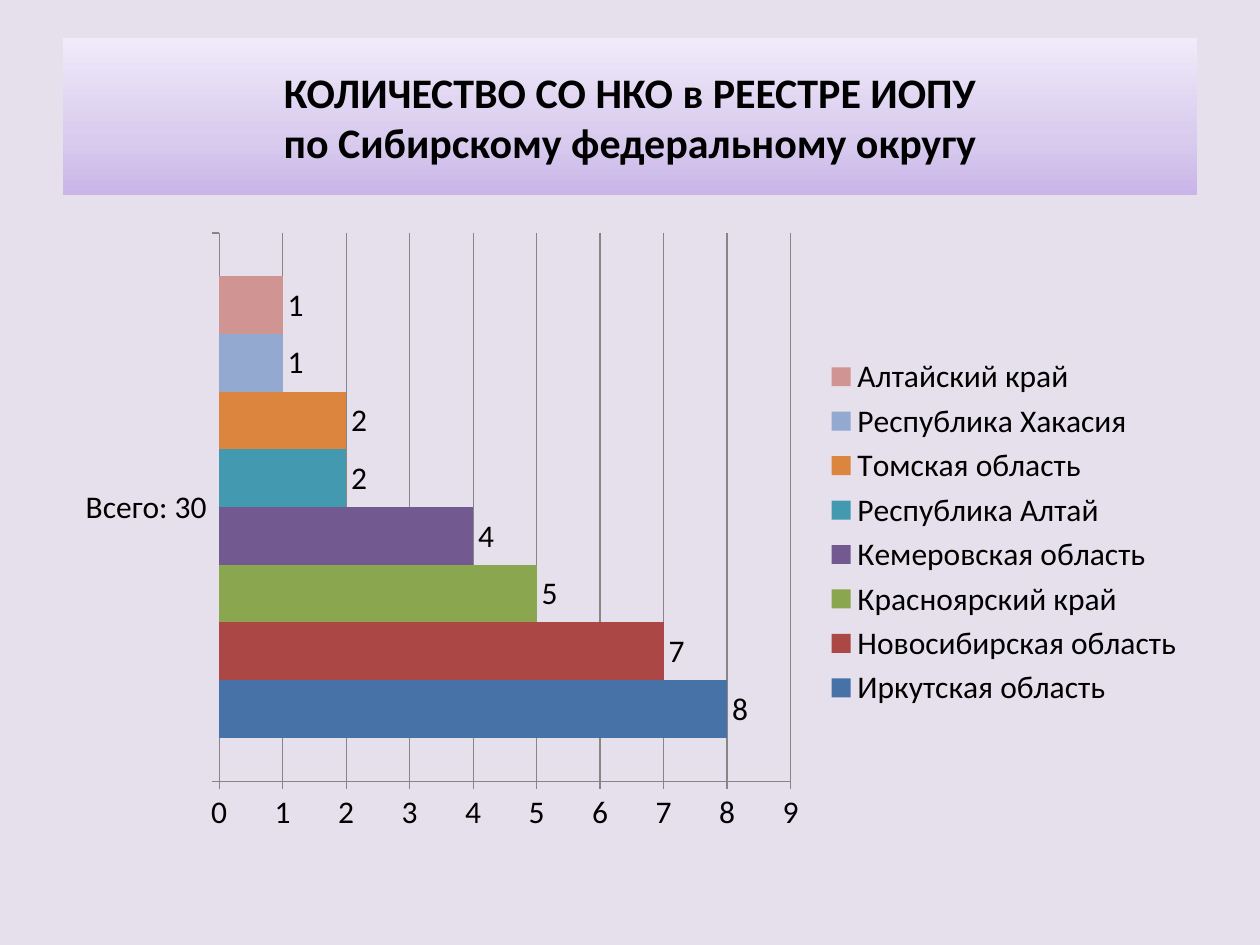
from copy import deepcopy
from dataclasses import dataclass

from pptx import Presentation
from pptx.chart.data import CategoryChartData
from pptx.dml.color import RGBColor
from pptx.enum.chart import (XL_CHART_TYPE, XL_LABEL_POSITION, XL_LEGEND_POSITION,
                             XL_TICK_MARK)
from pptx.enum.shapes import MSO_SHAPE
from pptx.enum.text import MSO_ANCHOR, PP_ALIGN
from pptx.oxml.ns import qn
from pptx.util import Inches, Pt


@dataclass(frozen=True)
class Theme:
    font: str = "Calibri"
    title_size: int = 24
    chart_size: int = 18
    text: str = "000000"
    background: str = "E6E0EC"
    axis: str = "868686"
    title_stops: tuple = ((0, "C9B5E8"), (0.35, "D8CBEE"), (1, "F0EAF9"))


@dataclass(frozen=True)
class Region:
    name: str
    count: int
    color: str


THEME = Theme()
TITLE = "КОЛИЧЕСТВО СО НКО в РЕЕСТРЕ ИОПУ\vпо Сибирскому федеральному округу"
REGIONS = (
    Region("Иркутская область", 8, "4672A8"),
    Region("Новосибирская область", 7, "AB4744"),
    Region("Красноярский край", 5, "8AA64F"),
    Region("Кемеровская область", 4, "725990"),
    Region("Республика Алтай", 2, "4299B0"),
    Region("Томская область", 2, "DC853E"),
    Region("Республика Хакасия", 1, "93A9D0"),
    Region("Алтайский край", 1, "D09493"),
)


def style_font(font, *, size: int, bold: bool = False) -> None:
    font.name = THEME.font
    font.size = Pt(size)
    font.bold = bold
    font.color.rgb = RGBColor.from_string(THEME.text)


def write_text(shape, text: str, *, size: int, bold: bool = False,
               align=PP_ALIGN.CENTER) -> None:
    frame = shape.text_frame
    frame.word_wrap = True
    frame.vertical_anchor = MSO_ANCHOR.MIDDLE
    para = frame.paragraphs[0]
    para.text = text
    para.alignment = align
    for span in para.runs:
        style_font(span.font, size=size, bold=bold)


def fill_gradient(shape, stops: tuple) -> None:
    """Fill from bottom to top through three colour stops."""
    shape.fill.gradient()
    shape.fill.gradient_angle = 90
    stop_list = shape._element.spPr.find(qn("a:gradFill")).find(qn("a:gsLst"))
    stop_list.append(deepcopy(stop_list[-1]))
    for stop, (position, color) in zip(shape.fill.gradient_stops, stops):
        stop.position = position
        stop.color.rgb = RGBColor.from_string(color)


def add_title(page) -> None:
    box = page.shapes.add_shape(MSO_SHAPE.RECTANGLE, Inches(0.5), Inches(0.3),
                                Inches(9), Inches(1.25))
    box.shadow.inherit = False
    box.line.fill.background()
    fill_gradient(box, THEME.title_stops)
    write_text(box, TITLE, size=THEME.title_size, bold=True)


def style_line(line) -> None:
    line.color.rgb = RGBColor.from_string(THEME.axis)
    line.width = Pt(0.75)


def add_region_chart(page, regions: tuple[Region, ...]) -> None:
    data = CategoryChartData()
    data.categories = [f"Всего: {sum(region.count for region in regions)}"]
    for region in regions:
        data.add_series(region.name, [region.count])
    chart = page.shapes.add_chart(XL_CHART_TYPE.BAR_CLUSTERED, Inches(0.5), Inches(1.75),
                                  Inches(9), Inches(4.95), data).chart
    style_font(chart.font, size=THEME.chart_size)
    chart.has_title = False
    chart.has_legend = True
    chart.legend.position = XL_LEGEND_POSITION.RIGHT
    chart.legend.include_in_layout = False

    plot = chart.plots[0]
    plot.gap_width = 150
    plot.vary_by_categories = False
    for series, region in zip(plot.series, regions):
        series.format.fill.solid()
        series.format.fill.fore_color.rgb = RGBColor.from_string(region.color)
        series.data_labels.show_value = True
        series.data_labels.position = XL_LABEL_POSITION.OUTSIDE_END

    for axis in (chart.category_axis, chart.value_axis):
        axis.major_tick_mark = XL_TICK_MARK.OUTSIDE
        axis.minor_tick_mark = XL_TICK_MARK.NONE
        style_line(axis.format.line)
    chart.value_axis.has_major_gridlines = True
    style_line(chart.value_axis.major_gridlines.format.line)


def main() -> None:
    deck = Presentation()
    deck.slide_width, deck.slide_height = Inches(10), Inches(7.5)
    page = deck.slides.add_slide(deck.slide_layouts[6])
    page.background.fill.solid()
    page.background.fill.fore_color.rgb = RGBColor.from_string(THEME.background)
    add_title(page)
    add_region_chart(page, REGIONS)
    deck.save("out.pptx")


if __name__ == "__main__":
    main()
